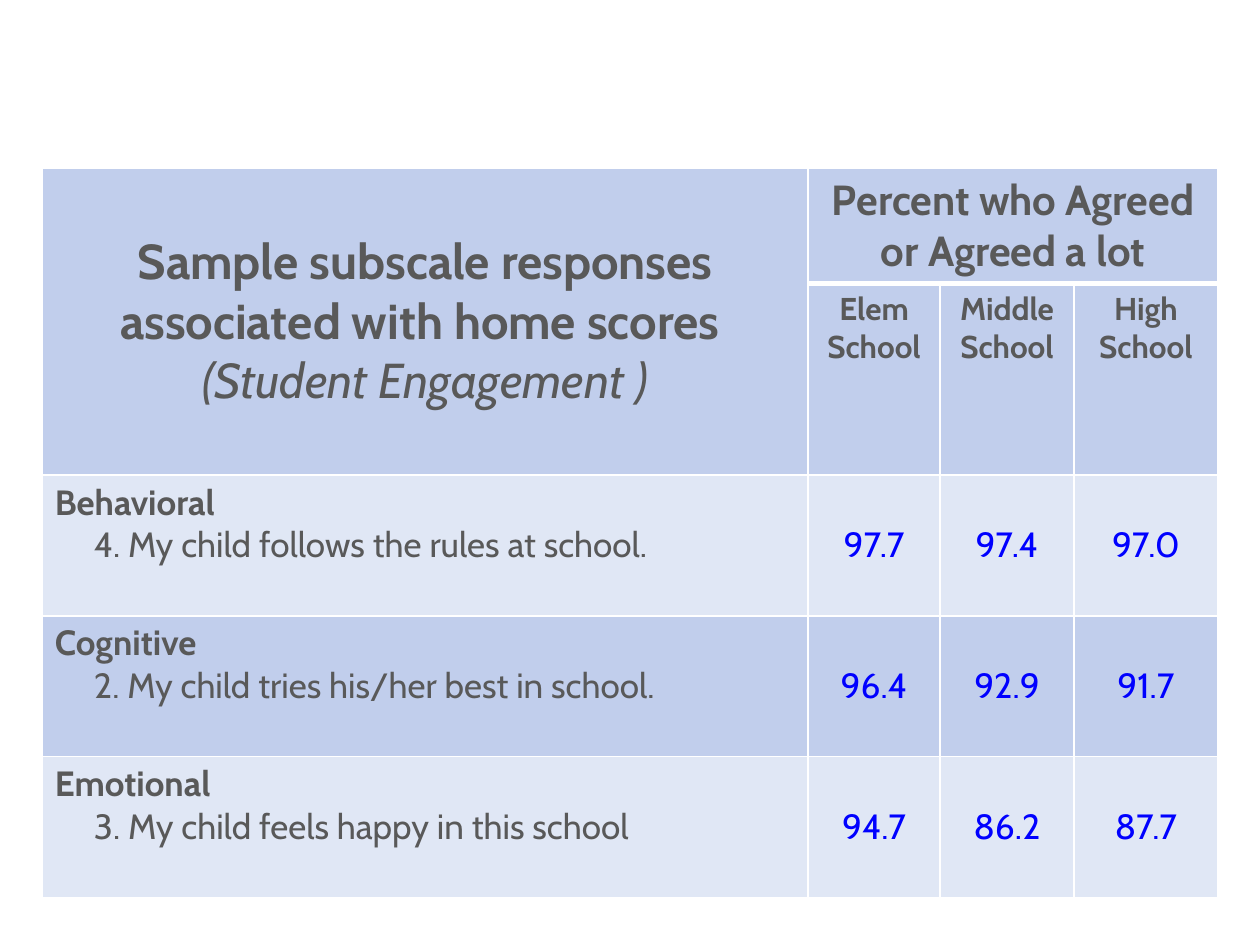
import pptx
import pptx.dml.color
import pptx.enum.text
import pptx.oxml
import pptx.oxml.ns
import pptx.util
from pptx.util import Cm

COLORS = {"band": "C1CEEC", "light": "E0E7F5", "border": "FFFFFF",
          "text": "595959", "value": "0000FF"}
FONT = "Cabin"
COLUMN_WIDTHS = [15.44, 2.66, 2.7, 2.9]
ROW_HEIGHTS = [2.3, 3.86, 2.84, 2.84, 2.84]
SCHOOLS = [["Elem", "School"], ["Middle School"], ["High School"]]
RESPONSES = [
    ("Behavioral", "4. My child follows the rules at school.", ["97.7", "97.4", "97.0"]),
    ("Cognitive", "2. My child tries his/her best in school.", ["96.4", "92.9", "91.7"]),
    ("Emotional", "3. My child feels happy in this school", ["94.7", "86.2", "87.7"]),
]
CENTER = pptx.enum.text.PP_ALIGN.CENTER
LEFT = pptx.enum.text.PP_ALIGN.LEFT
MIDDLE = pptx.enum.text.MSO_ANCHOR.MIDDLE


def rgb(name):
    return pptx.dml.color.RGBColor.from_string(COLORS[name])


def add_run(paragraph, text, size, color="text", bold=False, italic=False):
    run = paragraph.add_run()
    run.text = text
    run.font.name = FONT
    run.font.size = pptx.util.Pt(size)
    run.font.bold = bold
    run.font.italic = italic
    run.font.color.rgb = rgb(color)


def next_paragraph(cell, align):
    frame = cell.text_frame
    first = frame.paragraphs[0]
    paragraph = frame.add_paragraph() if first.runs else first
    paragraph.alignment = align
    return paragraph


def style_cell(cell, fill, top=1, bottom=1):
    """Set the white borders (widths in points), then the fill."""
    properties = cell._tc.get_or_add_tcPr()
    for side, width in (("L", 1), ("R", 1), ("T", top), ("B", bottom)):
        properties.append(pptx.oxml.parse_xml(
            f'<a:ln{side} {pptx.oxml.ns.nsdecls("a")} w="{pptx.util.Pt(width)}">'
            f'<a:solidFill><a:srgbClr val="{COLORS["border"]}"/></a:solidFill>'
            f'</a:ln{side}>'))
    cell.fill.solid()
    cell.fill.fore_color.rgb = rgb(fill)


def fill_header(table):
    for column in range(len(COLUMN_WIDTHS)):
        thick = 3 if column else 1
        style_cell(table.cell(0, column), "band", bottom=thick)
        style_cell(table.cell(1, column), "band", top=thick)

    # Title over both header rows
    title = table.cell(0, 0)
    title.merge(table.cell(1, 0))
    title.vertical_anchor = MIDDLE
    paragraph = next_paragraph(title, CENTER)
    add_run(paragraph, "Sample subscale responses associated with home scores ", 28, bold=True)
    paragraph.add_line_break()
    add_run(paragraph, "(Student Engagement )", 28, italic=True)

    # Heading over the three school columns
    percent = table.cell(0, 1)
    percent.merge(table.cell(0, 3))
    add_run(next_paragraph(percent, CENTER), "Percent who Agreed or Agreed a lot", 24, bold=True)
    for column, lines in enumerate(SCHOOLS, 1):
        for line in lines:
            add_run(next_paragraph(table.cell(1, column), CENTER), line, 18, bold=True)


def fill_response(table, row, subscale, statement, percents):
    fill = "band" if row % 2 else "light"
    for column in range(len(COLUMN_WIDTHS)):
        style_cell(table.cell(row, column), fill)

    label = table.cell(row, 0)
    add_run(next_paragraph(label, LEFT), subscale, 20, bold=True)
    item = next_paragraph(label, LEFT)
    item._p.get_or_add_pPr().set("marL", str(Cm(0.79)))
    add_run(item, statement, 20)

    for column, percent in enumerate(percents, 1):
        cell = table.cell(row, column)
        cell.vertical_anchor = MIDDLE
        add_run(next_paragraph(cell, CENTER), percent, 20, color="value")


def main():
    deck = pptx.Presentation()
    deck.slide_width, deck.slide_height = Cm(25.4), Cm(19.05)
    slide = deck.slides.add_slide(deck.slide_layouts[6])

    # Table grid
    table = slide.shapes.add_table(
        len(ROW_HEIGHTS), len(COLUMN_WIDTHS), Cm(0.85), Cm(3.4),
        Cm(sum(COLUMN_WIDTHS)), Cm(sum(ROW_HEIGHTS))).table
    for column, width in zip(table.columns, COLUMN_WIDTHS):
        column.width = Cm(width)
    for row, height in zip(table.rows, ROW_HEIGHTS):
        row.height = Cm(height)

    # Table content
    fill_header(table)
    for row, response in enumerate(RESPONSES, 2):
        fill_response(table, row, *response)

    deck.save("out.pptx")


if __name__ == "__main__":
    main()
